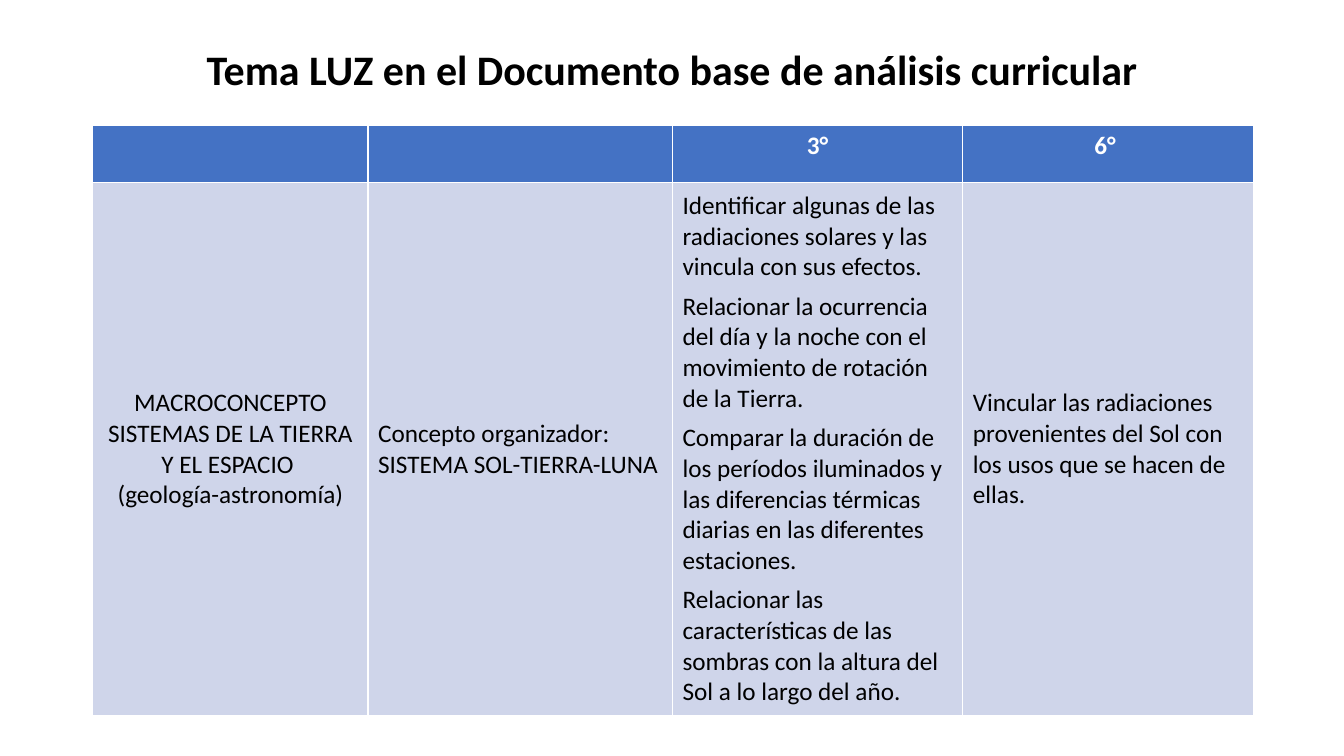
"""Build the slide on the topic of light in the curriculum analysis document."""
from pptx import Presentation
from pptx.dml.color import RGBColor
from pptx.enum import text
from pptx.util import Inches, Pt

FONT = "Calibri"
BLACK = RGBColor(0x00, 0x00, 0x00)
WHITE = RGBColor(0xFF, 0xFF, 0xFF)
BLUE = RGBColor(0x44, 0x72, 0xC4)
PALE_BLUE = RGBColor(0xCF, 0xD5, 0xEA)
CENTER, LEFT = text.PP_ALIGN.CENTER, text.PP_ALIGN.LEFT
TOP, MIDDLE = text.MSO_ANCHOR.TOP, text.MSO_ANCHOR.MIDDLE

COLUMN_WIDTHS = [2.73, 3.02, 2.88, 2.88]
ROW_HEIGHTS = [0.57, 5.29]
HEADINGS = ["", "", "3°", "6° "]
CONTENTS = [
    ["MACROCONCEPTO SISTEMAS DE LA TIERRA Y EL ESPACIO ",
     "(geología-astronomía)"],
    ["Concepto organizador: SISTEMA SOL-TIERRA-LUNA"],
    ["Identificar algunas de las radiaciones solares y las vincula con sus efectos.",
     "Relacionar la ocurrencia del día y la noche con el movimiento de rotación de la Tierra.",
     "Comparar la duración de los períodos iluminados y las diferencias térmicas diarias "
     "en las diferentes estaciones.",
     "Relacionar las características de las sombras con la altura del Sol a lo largo del año."],
    ["Vincular las radiaciones provenientes del Sol con los usos que se hacen de ellas."],
]
ALIGNMENTS = [CENTER, LEFT, LEFT, LEFT]
SPACES_BEFORE = [0, 0, 6, 0]


def format_paragraph(p, size, color, bold, align):
    """Apply font and alignment to a paragraph."""
    p.alignment = align
    p.font.name = FONT
    p.font.size = Pt(size)
    p.font.bold = bold
    p.font.color.rgb = color


def add_title(slide, left, top, width, height):
    """Place the slide title in the given box."""
    sp = slide.shapes.title
    sp.left, sp.top, sp.width, sp.height = map(Inches, (left, top, width, height))
    tf = sp.text_frame
    tf.text = "Tema LUZ en el Documento base de análisis curricular"
    tf.auto_size = text.MSO_AUTO_SIZE.NONE
    tf.vertical_anchor = MIDDLE
    p = tf.paragraphs[0]
    p.line_spacing = 0.9
    format_paragraph(p, 30, BLACK, True, CENTER)


def fill_cell(cell, lines, fill, color, bold, align, anchor, space=0):
    """Write lines as paragraphs in a filled table cell."""
    cell.fill.solid()
    cell.fill.fore_color.rgb = fill
    cell.vertical_anchor = anchor
    cell.text = "\n".join(lines)
    for p in cell.text_frame.paragraphs:
        p.space_before = Pt(space)
        format_paragraph(p, 18, color, bold, align)


def add_curriculum_table(slide, left, top):
    """Place the curriculum table with its top left corner at the given point."""
    width, height = sum(COLUMN_WIDTHS), sum(ROW_HEIGHTS)
    table = slide.shapes.add_table(
        len(ROW_HEIGHTS), len(COLUMN_WIDTHS), *map(Inches, (left, top, width, height))).table
    for row, row_height in zip(table.rows, ROW_HEIGHTS):
        row.height = Inches(row_height)
    for i, column_width in enumerate(COLUMN_WIDTHS):
        table.columns[i].width = Inches(column_width)
        fill_cell(table.cell(0, i), [HEADINGS[i]], BLUE, WHITE, True, CENTER, TOP)
        fill_cell(table.cell(1, i), CONTENTS[i], PALE_BLUE, BLACK, False,
                  ALIGNMENTS[i], MIDDLE, SPACES_BEFORE[i])


def main():
    """Create and save the presentation."""
    prs = Presentation()
    prs.slide_width, prs.slide_height = Inches(13.33), Inches(7.5)
    slide = prs.slides.add_slide(prs.slide_layouts[5])
    add_title(slide, 0.92, 0.4, 11.5, 0.63)
    add_curriculum_table(slide, 0.92, 1.24)
    prs.save("out.pptx")


if __name__ == "__main__":
    main()
